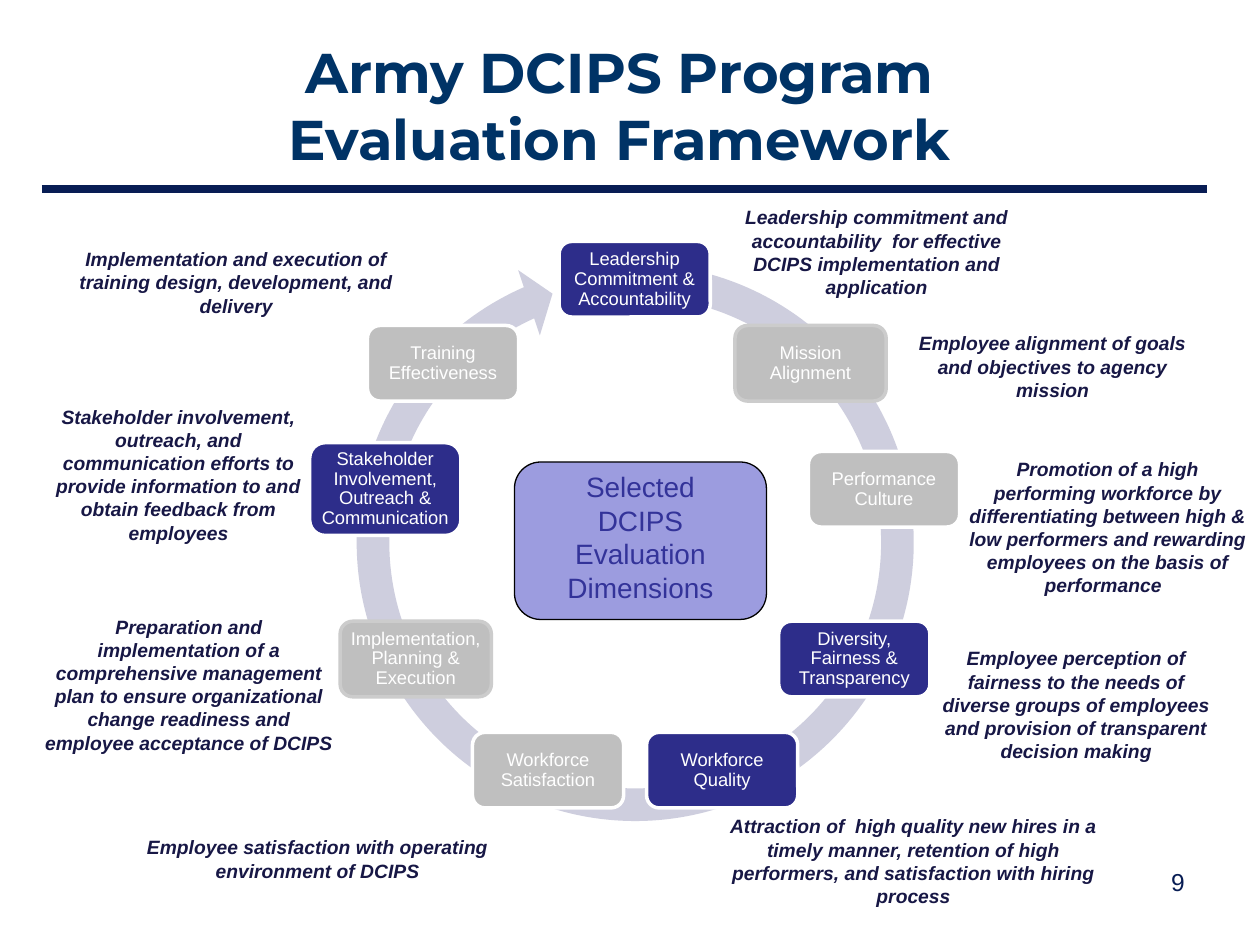
from lxml import etree
from pptx import Presentation
from pptx.dml.color import RGBColor
from pptx.enum.shapes import MSO_CONNECTOR, MSO_SHAPE
from pptx.enum.text import MSO_ANCHOR, PP_ALIGN
from pptx.oxml.ns import qn
from pptx.util import Pt

CENTER, RIGHT = PP_ALIGN.CENTER, PP_ALIGN.RIGHT
TOP, MIDDLE = MSO_ANCHOR.TOP, MSO_ANCHOR.MIDDLE
ROUND, ARROW = MSO_SHAPE.ROUNDED_RECTANGLE, MSO_SHAPE.CIRCULAR_ARROW
STRAIGHT = MSO_CONNECTOR.STRAIGHT

NAVY, WHITE = "081D54", "FFFFFF"
BLUE, GRAY, EDGE = "2D2D8A", "BFBFBF", "CCCCCC"
NODE_W, NODE_H = 86.4, 43.2

# Ring nodes, clockwise: text, left, top, height, fill, edge
NODES = [
    ("Leadership Commitment & Accountability", 319.5, 138, NODE_H, BLUE, WHITE),
    ("Mission Alignment", 420, 186, NODE_H, GRAY, EDGE),
    ("Performance Culture", 462, 258, NODE_H, GRAY, WHITE),
    ("Diversity, Fairness & Transparency", 445, 355, NODE_H, BLUE, WHITE),
    ("Workforce Quality", 369.5, 418.5, NODE_H, BLUE, WHITE),
    ("Workforce Satisfaction", 270, 418.5, NODE_H, GRAY, WHITE),
    ("Implementation, Planning & Execution", 194.4, 355, NODE_H, GRAY, EDGE),
    ("Stakeholder Involvement, Outreach & Communication", 177, 253, 53, BLUE, WHITE),
    ("Training Effectiveness", 210, 186, NODE_H, GRAY, WHITE),
]

# Descriptions around the ring, clockwise: text, left, top, width, height
NOTES = [
    ("Leadership commitment and accountability  for effective DCIPS "
     "implementation and application", 408, 114, 186, 60),
    ("Employee alignment of goals and objectives to agency mission",
     510, 186, 183, 47),
    ("Promotion of a high performing workforce by differentiating between "
     "high & low performers and rewarding employees on the basis of "
     "performance\t", 546, 258, 174, 87),
    ("Employee perception of fairness to the needs of diverse groups of "
     "employees and provision of transparent decision making",
     528, 366, 174, 74),
    ("Attraction of  high quality new hires in a timely manner, retention of "
     "high performers, and satisfaction with hiring process",
     402, 462, 240, 60),
    ("Employee satisfaction with operating environment of DCIPS",
     72, 474, 219, 34),
    ("Preparation and implementation of a comprehensive management plan to "
     "ensure organizational change readiness and employee acceptance of DCIPS",
     18, 348, 180, 87),
    ("Stakeholder involvement, outreach, and communication efforts to "
     "provide information to and obtain feedback from employees",
     24, 228, 156, 87),
    ("Implementation and execution of training design, development, and "
     "delivery", 30, 138, 210, 47),
]


def color(code):
    return RGBColor.from_string(code)


def write(shape, text, size=11, ink=WHITE, face="Arial", bold=False,
          slant=False, align=CENTER, anchor=TOP, inset=(7.2, 3.6), lead=None):
    """Fill a shape's text frame with one formatted paragraph."""
    frame = shape.text_frame
    frame.word_wrap = True
    frame.vertical_anchor = anchor
    frame.margin_left = frame.margin_right = Pt(inset[0])
    frame.margin_top = frame.margin_bottom = Pt(inset[1])
    para = frame.paragraphs[0]
    para.alignment = align
    if lead:
        para.line_spacing = lead
    run = para.add_run()
    run.text = text
    font = run.font
    font.name, font.size = face, Pt(size)
    font.bold, font.italic = bold, slant
    font.color.rgb = color(ink)


def add_text(slide, text, box, **form):
    shape = slide.shapes.add_textbox(*map(Pt, box))
    write(shape, text, **form)


def add_form(slide, kind, box, fill, edge=None, width=2):
    shape = slide.shapes.add_shape(kind, *map(Pt, box))
    shape.shadow.inherit = False
    shape.fill.solid()
    shape.fill.fore_color.rgb = color(fill)
    if edge:
        shape.line.color.rgb = color(edge)
        shape.line.width = Pt(width)
    else:
        shape.line.fill.background()
    return shape


def add_rule(slide, left, right, top):
    rule = slide.shapes.add_connector(STRAIGHT, Pt(left), Pt(top), Pt(right), Pt(top))
    rule.line.color.rgb = color(NAVY)
    rule.line.width = Pt(4.5)
    etree.SubElement(rule._element.spPr, qn("a:effectLst"))


def add_title(slide, text, box):
    title = slide.shapes.title
    title.left, title.top, title.width, title.height = map(Pt, box)
    write(title, text, size=32, ink="003366", face="Montserrat", bold=True,
          anchor=MIDDLE)


def add_ring(slide):
    ring = add_form(slide, ARROW, (193.5, 140.5, 339, 339), "CECEDE")
    # Band width, head angle, end angle, start angle, head width
    for i, value in enumerate((0.055, 3.307, 147.665, 168.08, 0.058)):
        ring.adjustments[i] = value


def main():
    deck = Presentation()
    deck.slide_width, deck.slide_height = Pt(720), Pt(540)
    slide = deck.slides.add_slide(deck.slide_layouts[5])

    # Heading
    add_rule(slide, 24, 690, 108)
    add_title(slide, "Army DCIPS Program Evaluation Framework", (132, 18, 444, 84))

    # Descriptions
    for text, *box in NOTES:
        add_text(slide, text, box, ink="171745", bold=True, slant=True)

    # Ring and its nodes
    add_ring(slide)
    for text, left, top, height, fill, edge in NODES:
        node = add_form(slide, ROUND, (left, top, NODE_W, height), fill, edge)
        write(node, text, size=10.5, anchor=MIDDLE, inset=(1.5, 1.5), lead=0.9)

    # Centre
    hub = add_form(slide, ROUND, (294, 264, 144, 90), "9C9CDF", "000000", 0.75)
    write(hub, "Selected DCIPS Evaluation Dimensions", size=16, ink="333399",
          inset=(15, 0))

    # Page number
    add_text(slide, "9", (516, 492, 168, 37), size=14, ink=NAVY, align=RIGHT)

    deck.save("out.pptx")


if __name__ == "__main__":
    main()
